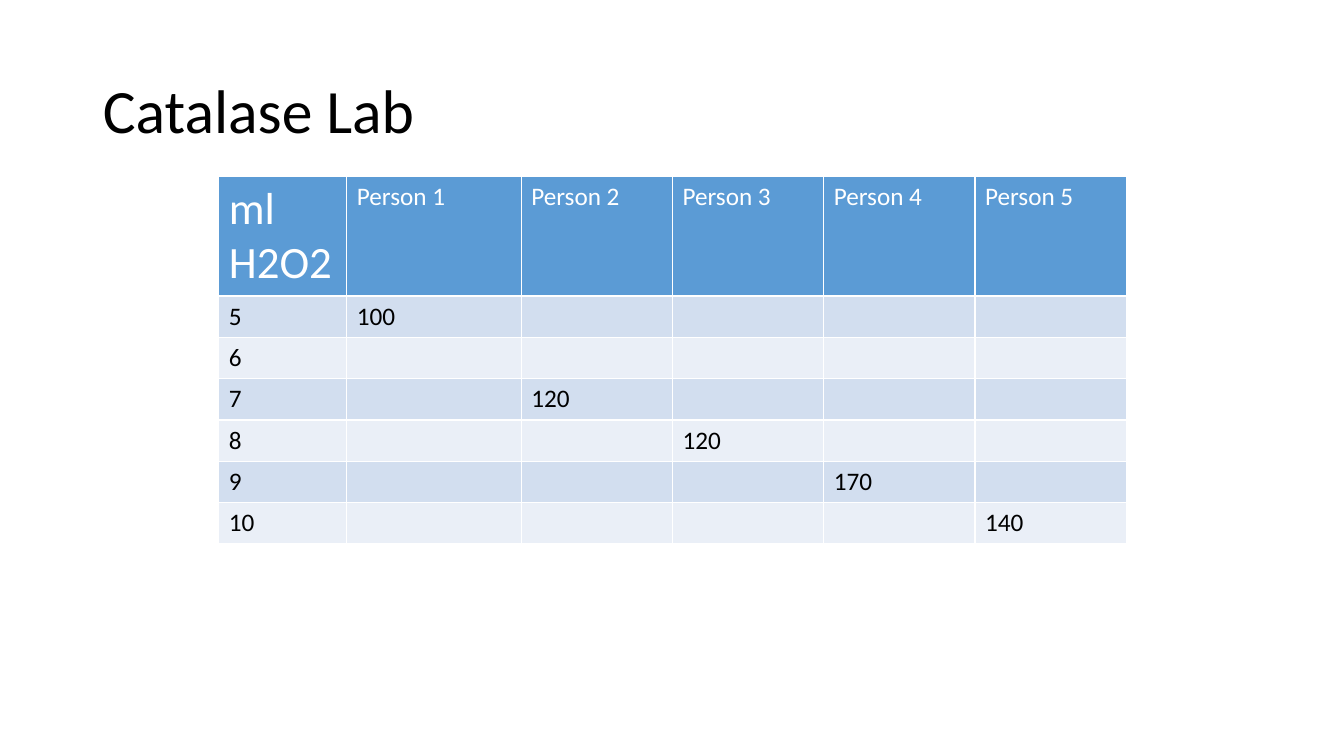
"""Build the Catalase Lab slide with its table of readings per person."""
import pptx
import pptx.dml.color
import pptx.enum.text
import pptx.util

RGBColor = pptx.dml.color.RGBColor
Inches = pptx.util.Inches
Pt = pptx.util.Pt

BLACK = RGBColor(0x00, 0x00, 0x00)
WHITE = RGBColor(0xFF, 0xFF, 0xFF)
HEADER_BLUE = RGBColor(0x5B, 0x9B, 0xD5)
BANDS = [RGBColor(0xEA, 0xEF, 0xF7), RGBColor(0xD2, 0xDE, 0xEF)]
FONT = "Calibri"

HEADERS = ["ml H2O2"] + [f"Person {n}" for n in range(1, 6)]
VOLUMES = range(5, 11)
READINGS = {(5, 1): 100, (7, 2): 120, (8, 3): 120, (9, 4): 170, (10, 5): 140}
COLUMN_WIDTHS = [1.27, 1.73] + [1.5] * 4
ROW_HEIGHTS = [1.18] + [0.41] * len(VOLUMES)


def style_run(r, size, color):
    r.font.name = FONT
    r.font.size = Pt(size)
    r.font.bold = False
    r.font.color.rgb = color


prs = pptx.Presentation()
prs.slide_width = Inches(13.33)
prs.slide_height = Inches(7.5)
s = prs.slides.add_slide(prs.slide_layouts[5])

title = s.shapes.title
title.left, title.top = Inches(0.92), Inches(0.4)
title.width, title.height = Inches(11.5), Inches(1.45)
tf = title.text_frame
tf.text = "Catalase Lab"
tf.vertical_anchor = pptx.enum.text.MSO_ANCHOR.MIDDLE
p = tf.paragraphs[0]
p.alignment = pptx.enum.text.PP_ALIGN.LEFT
p.line_spacing = 0.9
style_run(p.runs[0], 44, BLACK)

rows = [HEADERS]
for volume in VOLUMES:
    rows.append([volume] + [READINGS.get((volume, person), "") for person in range(1, 6)])

table = s.shapes.add_table(
    len(rows), len(HEADERS), Inches(2.17), Inches(1.75),
    Inches(sum(COLUMN_WIDTHS)), Inches(sum(ROW_HEIGHTS)),
).table
for column, width in zip(table.columns, COLUMN_WIDTHS):
    column.width = Inches(width)
for row, height in zip(table.rows, ROW_HEIGHTS):
    row.height = Inches(height)

for i, values in enumerate(rows):
    for j, value in enumerate(values):
        cell = table.cell(i, j)
        cell.fill.solid()
        cell.fill.fore_color.rgb = BANDS[i % 2] if i else HEADER_BLUE
        if value != "":
            cell.text = str(value)
            size = 32 if i == j == 0 else 18
            style_run(cell.text_frame.paragraphs[0].runs[0], size, BLACK if i else WHITE)

prs.save("out.pptx")
